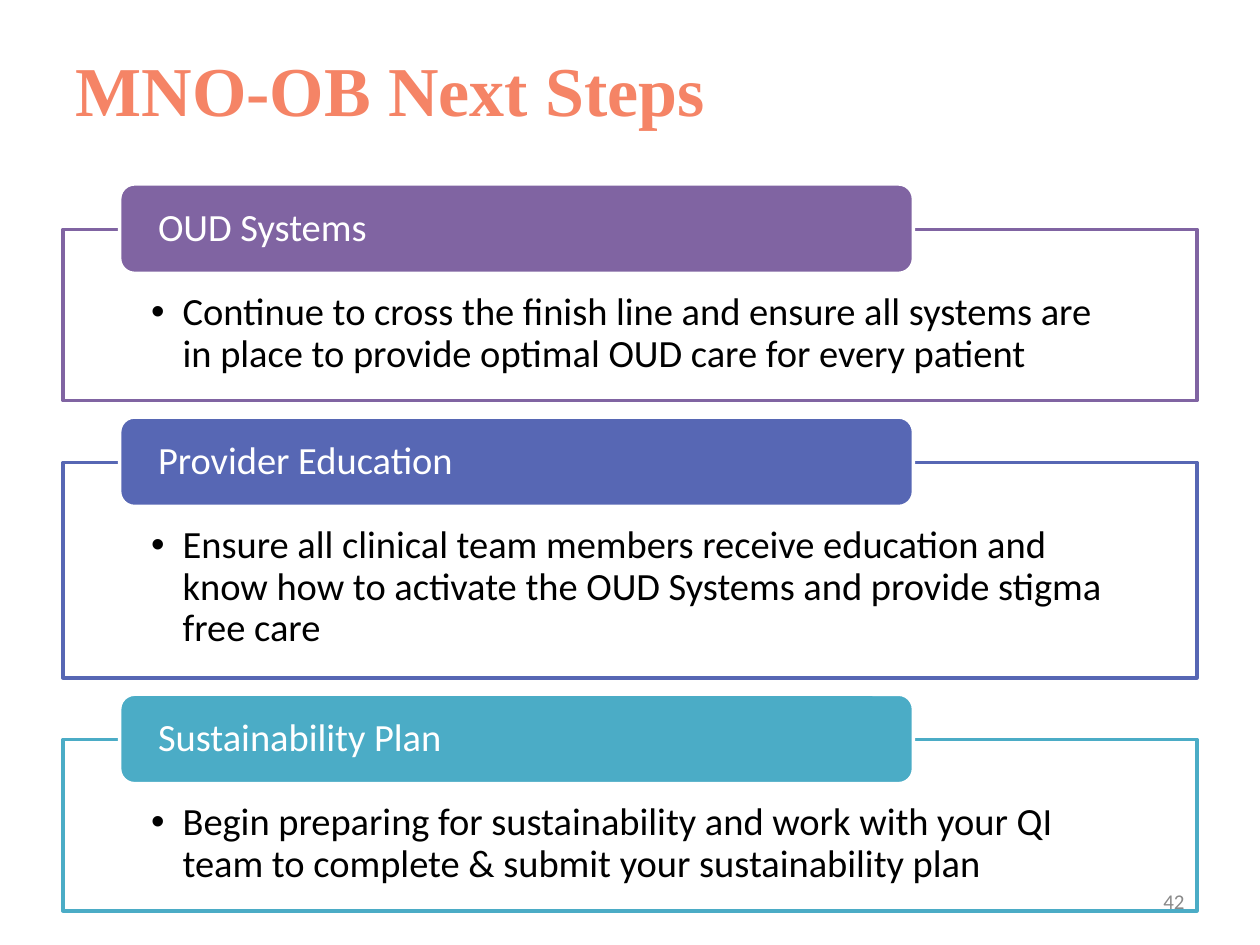
from lxml import etree
from pptx import Presentation
from pptx.dml.color import RGBColor
from pptx.enum.shapes import MSO_SHAPE
from pptx.enum.text import MSO_ANCHOR, MSO_AUTO_SIZE, PP_ALIGN
from pptx.oxml.ns import qn
from pptx.util import Inches, Pt

LEFT, WIDTH = 0.5, 9
FIRST_TOP, GAP = 1.82, 0.49
STEPS = [
    ("OUD Systems", "8064A2", 1.36,
     "Continue to cross the finish line and ensure all systems are in place "
     "to provide optimal OUD care for every patient"),
    ("Provider Education", "5767B4", 1.71,
     "Ensure all clinical team members receive education and know how to "
     "activate the OUD Systems and provide stigma free care"),
    ("Sustainability Plan", "4BACC6", 1.36,
     "Begin preparing for sustainability and work with your QI team to "
     "complete & submit your sustainability plan"),
]


def color(hex_value):
    return RGBColor.from_string(hex_value)


def set_all(target, values):
    for name, value in values.items():
        setattr(target, name, value)


def write(shape, text, size, hex_value, font="Calibri", bold=False,
          align=PP_ALIGN.LEFT, anchor=MSO_ANCHOR.MIDDLE, spacing=None,
          insets=(0.1, 0.05, 0.1, 0.05), bullet=False):
    frame = shape.text_frame
    sides = ("margin_left", "margin_top", "margin_right", "margin_bottom")
    set_all(frame, {"word_wrap": True, "auto_size": MSO_AUTO_SIZE.NONE,
                    "vertical_anchor": anchor,
                    **{side: Inches(inset) for side, inset in zip(sides, insets)}})
    frame.text = text
    paragraph = frame.paragraphs[0]
    set_all(paragraph, {"alignment": align, "line_spacing": spacing})
    if bullet:
        properties = paragraph._p.get_or_add_pPr()
        properties.set("marL", str(Inches(0.25)))
        properties.set("indent", str(Inches(-0.25)))
        etree.SubElement(properties, qn("a:buFont"), typeface="Arial")
        etree.SubElement(properties, qn("a:buChar"), char="•")
    run_font = paragraph.runs[0].font
    set_all(run_font, {"name": font, "size": Pt(size), "bold": bold})
    run_font.color.rgb = color(hex_value)


def add_panel(slide, kind, box, fill, line):
    panel = slide.shapes.add_shape(kind, *map(Inches, box))
    panel.shadow.inherit = False
    panel.fill.solid()
    panel.fill.fore_color.rgb = color(fill)
    panel.line.color.rgb = color(line)
    panel.line.width = Pt(2)
    return panel


def add_title(slide, box):
    title = slide.shapes.title
    set_all(title, dict(zip(("left", "top", "width", "height"), map(Inches, box))))
    write(title, "MNO-OB Next Steps", 40, "F58466", "Times New Roman", bold=True)


def add_step(slide, box, heading, accent, detail):
    left, top, width, _ = box
    # Outlined frame with the bulleted detail
    detail_frame = add_panel(slide, MSO_SHAPE.RECTANGLE, box, "FFFFFF", accent)
    write(detail_frame, detail, 22, "000000", anchor=MSO_ANCHOR.TOP, spacing=0.9,
          insets=(0.7, 0.5, 0.7, 0.17), bullet=True)
    # Heading tab over the top edge
    tab_box = (left + 0.45, top - 0.36, width * 0.7, 0.71)
    tab = add_panel(slide, MSO_SHAPE.ROUNDED_RECTANGLE, tab_box, accent, "FFFFFF")
    write(tab, heading, 22, "FFFFFF", spacing=0.9, insets=(0.27, 0, 0.27, 0))


def add_page_number(slide, box):
    page_number = slide.shapes.add_textbox(*map(Inches, box))
    write(page_number, "42", 12, "898989", align=PP_ALIGN.RIGHT)


def main():
    presentation = Presentation()
    set_all(presentation, {"slide_width": Inches(10), "slide_height": Inches(7.5)})
    slide = presentation.slides.add_slide(presentation.slide_layouts[5])

    add_title(slide, (LEFT, 0.08, WIDTH, 1.25))
    top = FIRST_TOP
    for heading, accent, height, detail in STEPS:
        add_step(slide, (LEFT, top, WIDTH, height), heading, accent, detail)
        top += height + GAP
    add_page_number(slide, (7.17, 6.95, 2.33, 0.4))

    presentation.save("out.pptx")


if __name__ == "__main__":
    main()
